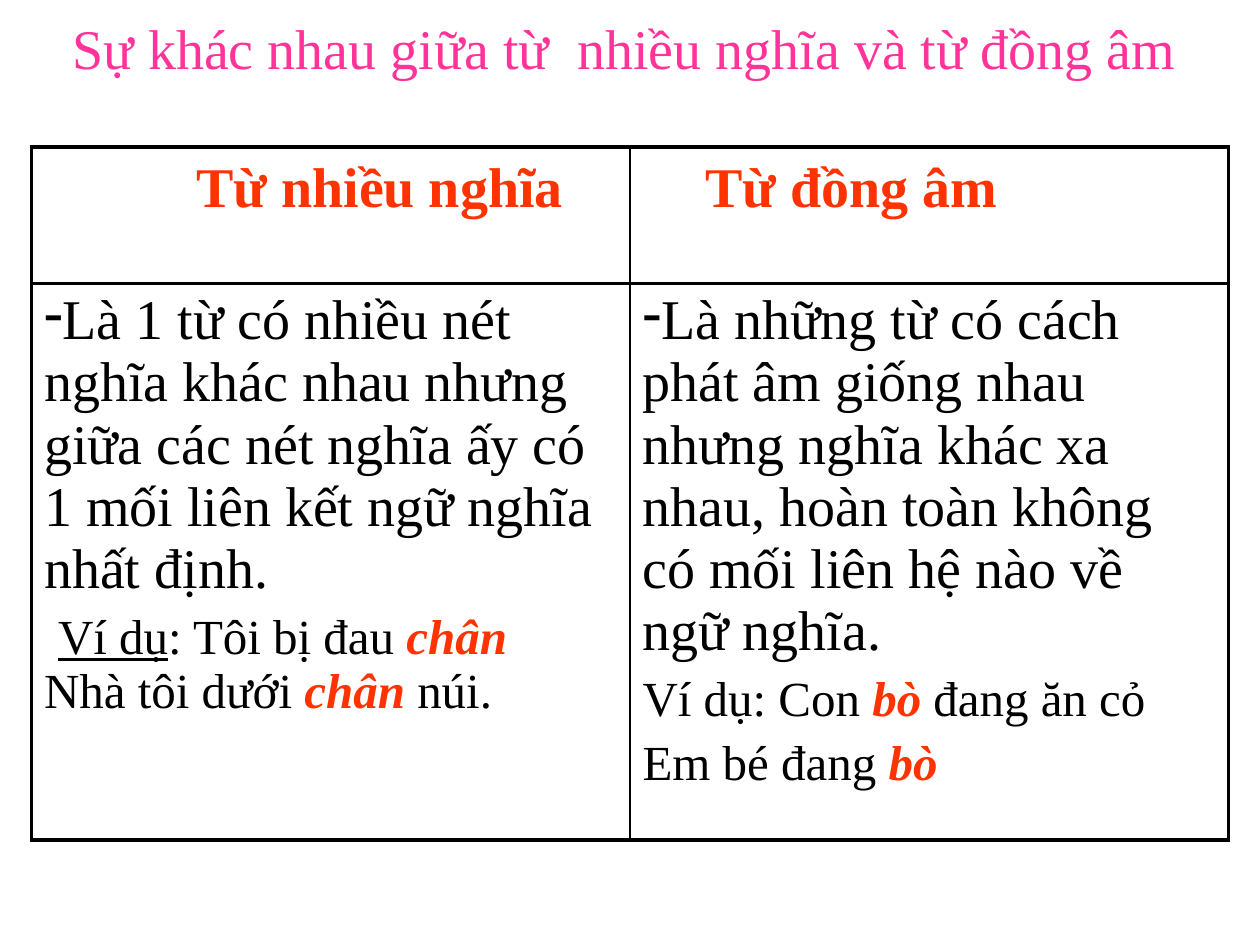
from lxml import etree
from pptx import Presentation
from pptx.dml.color import RGBColor
from pptx.enum.text import MSO_ANCHOR, MSO_AUTO_SIZE, PP_ALIGN
from pptx.oxml.ns import qn
from pptx.util import Pt

CENTER, LEFT = PP_ALIGN.CENTER, PP_ALIGN.LEFT
TOP = MSO_ANCHOR.TOP
NO_FIT = MSO_AUTO_SIZE.NONE
BLACK = RGBColor(0x00, 0x00, 0x00)
PINK = RGBColor(0xFF, 0x33, 0x99)
RED = RGBColor(0xFF, 0x33, 0x00)
FONT = "Times New Roman"
LARGE, SMALL = 32, 28
THICK, THIN = 2.25, 1

TITLE = "Sự khác nhau giữa từ  nhiều nghĩa và từ đồng âm"
HEADERS = [("Từ nhiều nghĩa", 87), ("Từ đồng âm", 36)]
DEFINITIONS = [
    "Là 1 từ có nhiều nét nghĩa khác nhau nhưng giữa các nét nghĩa ấy có "
    "1 mối liên kết ngữ nghĩa nhất định.",
    "Là những từ có cách phát âm giống nhau nhưng nghĩa khác xa nhau, "
    "hoàn toàn không có mối liên hệ nào về ngữ nghĩa.",
]
EXAMPLES = [
    [[("Ví dụ", "underline"), (": Tôi bị đau ", ""), ("chân", "key"), ("\n", ""),
      ("Nhà tôi dưới ", ""), ("chân ", "key"), ("núi.", "")]],
    [[("Ví dụ: Con ", ""), ("bò ", "key"), ("đang ăn cỏ", "")],
     [("Em bé đang ", ""), ("bò", "key")]],
]
FIRST_LINE_INDENTS = [8, 0]


def style(para, size, color=BLACK, bold=False):
    para.font.name = FONT
    para.font.size = Pt(size)
    para.font.color.rgb = color
    para.font.bold = bold


def set_indent(para, left=0, first=0):
    properties = para._p.get_or_add_pPr()
    properties.set("marL", str(Pt(left)))
    properties.set("indent", str(Pt(first)))
    return properties


def set_borders(cell, widths):
    properties = cell._tc.get_or_add_tcPr()
    for position, (side, width) in enumerate(zip("LRTB", widths)):
        line = etree.Element(qn(f"a:ln{side}"), w=str(Pt(width)))
        fill = etree.SubElement(line, qn("a:solidFill"))
        etree.SubElement(fill, qn("a:srgbClr"), val=str(BLACK))
        properties.insert(position, line)


def add_title(page, left, top, width, height):
    title = page.shapes.title
    title.left, title.top, title.width, title.height = map(Pt, (left, top, width, height))
    frame = title.text_frame
    frame.word_wrap = True
    frame.auto_size = NO_FIT
    frame.vertical_anchor = TOP
    frame.margin_top = Pt(7.6)
    para = frame.paragraphs[0]
    para.text = TITLE
    para.alignment = CENTER
    style(para, LARGE, PINK)


def fill_header(cell, text, indent):
    cell.margin_top = Pt(6)
    para = cell.text_frame.paragraphs[0]
    para.text = text
    para.alignment = LEFT
    set_indent(para, indent)
    style(para, LARGE, RED, True)


def fill_body(cell, definition, examples, first_indent):
    frame = cell.text_frame
    para = frame.paragraphs[0]
    para.text = definition
    etree.SubElement(set_indent(para), qn("a:buChar"), char="-")
    style(para, LARGE)
    for example in examples:
        para = frame.add_paragraph()
        set_indent(para, 0, first_indent)
        para.space_before = Pt(0.2 * SMALL)
        style(para, SMALL)
        for text, kind in example:
            if text == "\n":
                para.add_line_break()
                continue
            span = para.add_run()
            span.text = text
            if kind == "underline":
                span.font.underline = True
            elif kind == "key":
                span.font.bold = span.font.italic = True
                span.font.color.rgb = RED


def add_comparison(page, left, top, width, height):
    table = page.shapes.add_table(2, 2, Pt(left), Pt(top), Pt(width), Pt(height)).table
    table.first_row = table.horz_banding = False
    header_height = 78
    table.rows[0].height = Pt(header_height)
    table.rows[1].height = Pt(height - header_height)
    for index in range(2):
        table.columns[index].width = Pt(width / 2)
        fill_header(table.cell(0, index), *HEADERS[index])
        fill_body(table.cell(1, index), DEFINITIONS[index], EXAMPLES[index],
                  FIRST_LINE_INDENTS[index])
        sides = (THICK, THIN) if index == 0 else (THIN, THICK)
        for row in range(2):
            cell = table.cell(row, index)
            cell.fill.background()
            set_borders(cell, (*sides, THICK, THICK))


def main():
    deck = Presentation()
    deck.slide_width, deck.slide_height = Pt(720), Pt(540)
    page = deck.slides.add_slide(deck.slide_layouts[5])
    add_title(page, 30, 0, 654, 85)
    add_comparison(page, 18, 84, 684, 396)
    deck.save("out.pptx")


if __name__ == "__main__":
    main()
